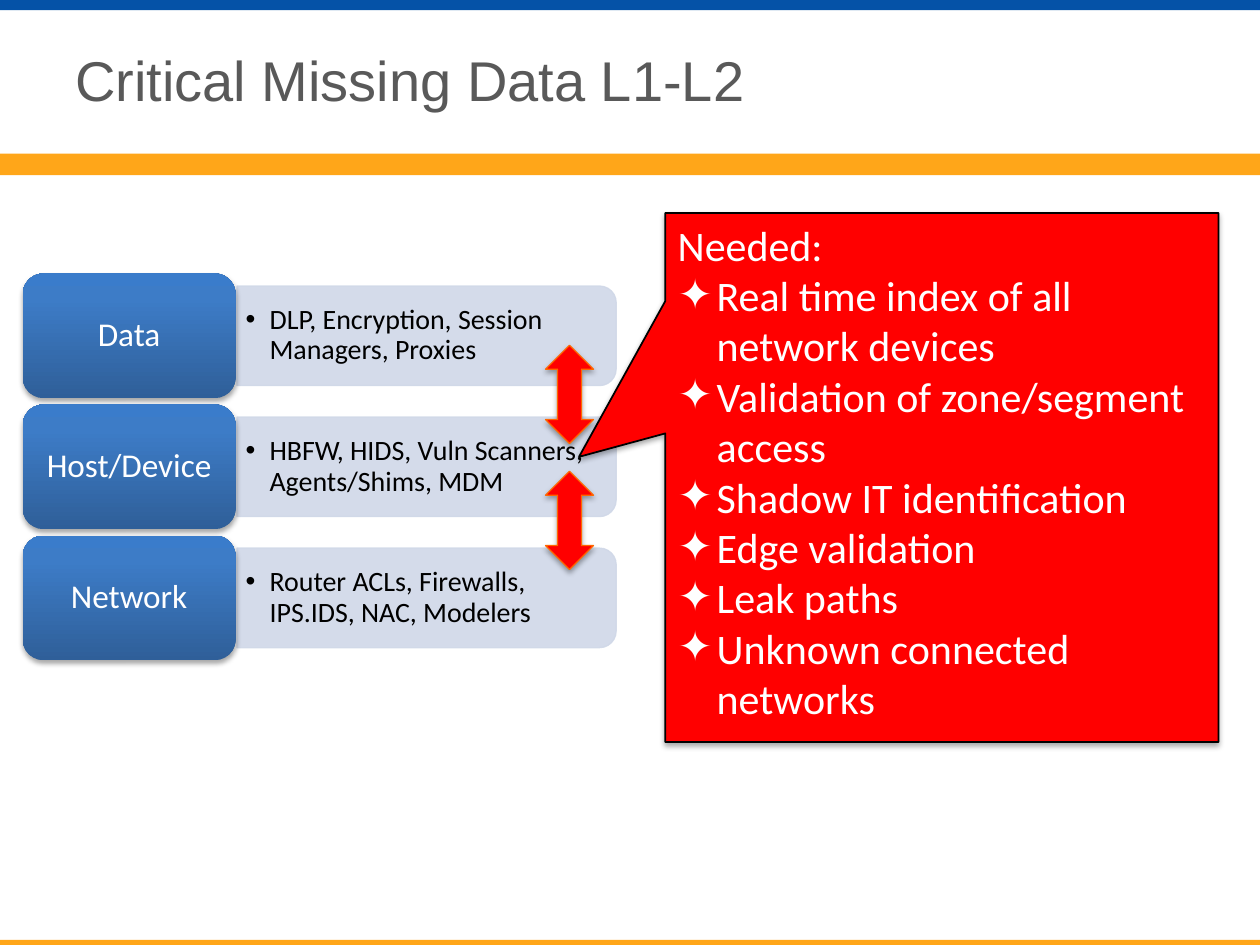
from copy import deepcopy

from lxml import etree
from pptx import Presentation
from pptx.dml.color import RGBColor
from pptx.enum import shapes, text
from pptx.oxml.ns import qn
from pptx.util import Inches, Pt

COLORS = {"blue": "0552A7", "orange": "FFA619", "title": "595959",
          "panel": "D0D8E8", "red": "FF0000", "arrow_line": "FF6600",
          "white": "FFFFFF", "black": "000000"}
GRADIENT = [(0, "2F5F99"), (0.8, "3D7CC7"), (1, "3A7CCB")]

TITLE = "Critical Missing Data L1-L2"
BANDS = [(7.46, 0.05, "orange"), (1.22, 0.17, "orange"), (0, 0.08, "blue")]
LAYERS = [
    ("Data", "DLP, Encryption, Session Managers, Proxies"),
    ("Host/Device", "HBFW, HIDS, Vuln Scanners, Agents/Shims, MDM"),
    ("Network", "Router ACLs, Firewalls, IPS.IDS, NAC, Modelers"),
]
NEEDED = ["Real time index of all network devices",
          "Validation of zone/segment access", "Shadow IT identification",
          "Edge validation", "Leak paths", "Unknown connected networks"]

LAYER_TOP, LAYER_PITCH = 2.17, 1.04
LABEL_LEFT, LABEL_WIDTH, LABEL_HEIGHT = 0.18, 1.69, 0.99
PANEL_LEFT, PANEL_WIDTH, PANEL_HEIGHT = 1.88, 3.01, 0.79
ARROW_TOPS = [2.74, 3.74]

SHAPE = shapes.MSO_SHAPE
presentation = Presentation()
presentation.slide_width, presentation.slide_height = Inches(10), Inches(7.5)
slide = presentation.slides.add_slide(presentation.slide_layouts[6])


def color(name):
    return RGBColor.from_string(COLORS[name])


def add_shape(kind, box, fill=None, line=None, line_width=0.75):
    shape = slide.shapes.add_shape(kind, *map(Inches, box))
    shape.shadow.inherit = False
    if fill:
        shape.fill.solid()
        shape.fill.fore_color.rgb = color(fill)
    if line:
        shape.line.color.rgb = color(line)
        shape.line.width = Pt(line_width)
    else:
        shape.line.fill.background()
    return shape


def add_shadow(shape):
    effects = shape._element.spPr.find(qn("a:effectLst"))
    shadow = etree.SubElement(effects, qn("a:outerShdw"), blurRad=str(Pt(3.1)),
                              dist=str(Pt(1.8)), dir="5400000", rotWithShape="0")
    shade = etree.SubElement(shadow, qn("a:srgbClr"), val=COLORS["black"])
    etree.SubElement(shade, qn("a:alpha"), val="35000")


def set_transparency(fill_format_parent, alpha):
    for rgb in fill_format_parent.iter(qn("a:srgbClr")):
        etree.SubElement(rgb, qn("a:alpha"), val=str(alpha * 1000))


def fill_gradient(shape):
    shape.fill.gradient()
    shape.fill.gradient_angle = 90
    stop_list = shape._element.spPr.find(".//" + qn("a:gsLst"))
    stop_list.append(deepcopy(stop_list[-1]))
    for stop, (position, rgb) in zip(shape.fill.gradient_stops, GRADIENT):
        stop.position = position
        stop.color.rgb = RGBColor.from_string(rgb)


def set_text(shape, lines, size, ink, font="Calibri", insets=(0.1, 0.05),
             align=text.PP_ALIGN.LEFT, anchor=text.MSO_ANCHOR.MIDDLE, spacing=None):
    frame = shape.text_frame
    frame.word_wrap = True
    frame.vertical_anchor = anchor
    frame.margin_left = frame.margin_right = Inches(insets[0])
    frame.margin_top = frame.margin_bottom = Inches(insets[1])
    frame.text = "\n".join(lines)
    for paragraph in frame.paragraphs:
        paragraph.alignment = align
        paragraph.line_spacing = spacing
        for run in paragraph.runs:
            run.font.name, run.font.size = font, Pt(size)
            run.font.color.rgb = color(ink)
    return frame


def add_bullet(paragraph, character, indent):
    properties = paragraph._p.get_or_add_pPr()
    properties.set("marL", str(Inches(indent)))
    properties.set("indent", str(-Inches(indent)))
    etree.SubElement(properties, qn("a:buFont"), typeface="Arial")
    etree.SubElement(properties, qn("a:buChar"), char=character)


def add_layer(top, label, details):
    middle = top + LABEL_HEIGHT / 2
    # The panel is a tall shape turned a quarter, so its round corners face right.
    panel = add_shape(SHAPE.ROUND_2_SAME_RECTANGLE,
                      (PANEL_LEFT + (PANEL_WIDTH - PANEL_HEIGHT) / 2,
                       middle - PANEL_WIDTH / 2, PANEL_HEIGHT, PANEL_WIDTH),
                      "panel", "panel")
    panel.rotation = 90
    set_transparency(panel._element.spPr, 90)

    details_box = slide.shapes.add_textbox(
        *map(Inches, (PANEL_LEFT, middle - 0.36, 2.97, 0.72)))
    frame = set_text(details_box, [details], 16, "black",
                     insets=(0.07, 0.03), spacing=0.9)
    add_bullet(frame.paragraphs[0], "•", 0.19)

    label_box = add_shape(SHAPE.ROUNDED_RECTANGLE,
                          (LABEL_LEFT, top, LABEL_WIDTH, LABEL_HEIGHT))
    fill_gradient(label_box)
    add_shadow(label_box)
    set_text(label_box, [label], 19, "white", insets=(0.08, 0.04),
             align=text.PP_ALIGN.CENTER, spacing=0.9)


for top, height, fill in BANDS:
    add_shape(SHAPE.RECTANGLE, (0, top, 10, height), fill)

title = slide.shapes.add_textbox(*map(Inches, (0.5, 0.11, 9, 1.03)))
set_text(title, [TITLE], 32, "title", font="Arial")

for row, (label, details) in enumerate(LAYERS):
    add_layer(LAYER_TOP + row * LAYER_PITCH, label, details)

for top in ARROW_TOPS:
    add_shadow(add_shape(SHAPE.UP_DOWN_ARROW, (4.33, top, 0.38, 0.78),
                         "red", "arrow_line"))

callout = add_shape(SHAPE.RECTANGULAR_CALLOUT, (5.28, 1.69, 4.39, 4.2),
                    "red", "black", 1)
callout.adjustments[0], callout.adjustments[1] = -0.656, -0.039
add_shadow(callout)
frame = set_text(callout, ["Needed:"] + NEEDED, 24, "white",
                 anchor=text.MSO_ANCHOR.TOP)
for paragraph in frame.paragraphs[1:]:
    add_bullet(paragraph, "✦", 0.31)

presentation.save("out.pptx")
